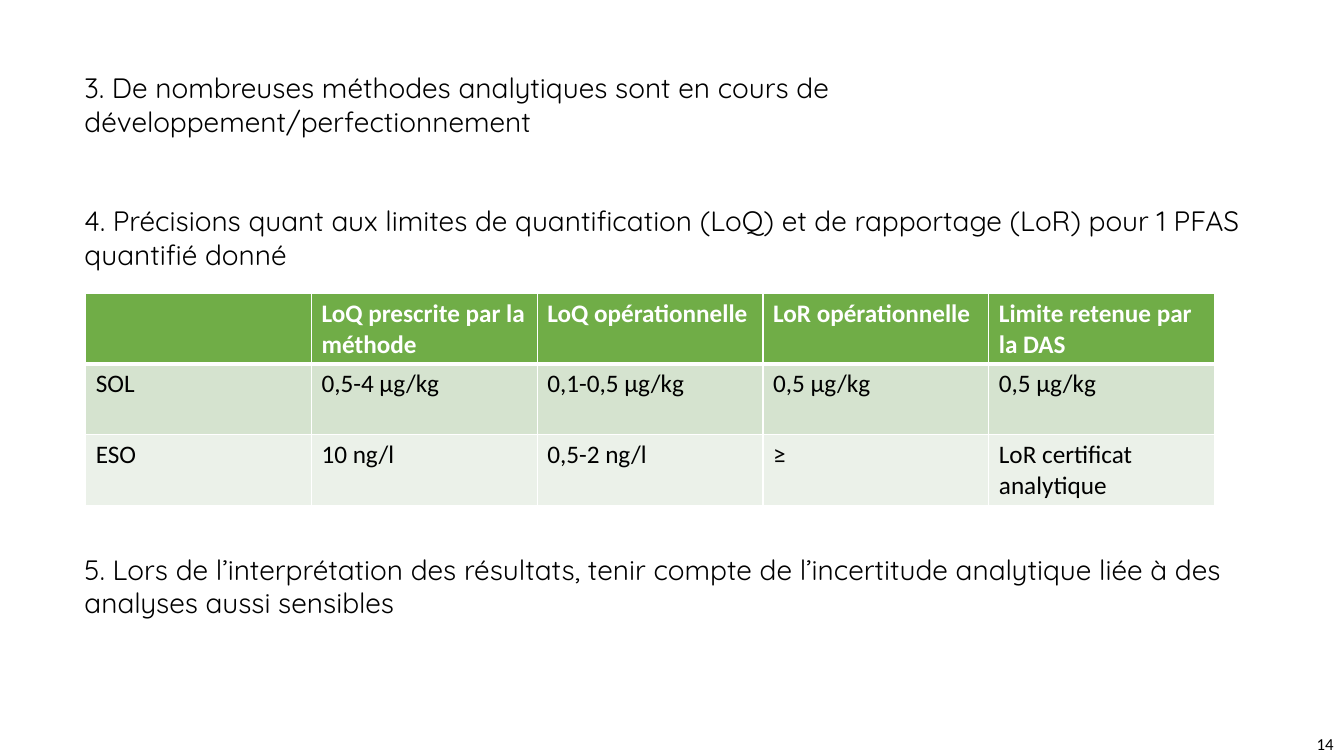
from itertools import product
from lxml.etree import SubElement
from pptx import Presentation
from pptx.dml.color import RGBColor
from pptx.enum.text import MSO_ANCHOR, PP_ALIGN
from pptx.oxml.ns import qn
from pptx.util import Cm, Pt

# Content
POINTS = [  # text, space before in points
    ("3. De nombreuses méthodes analytiques sont en cours de développement/perfectionnement", 0),
    ("4. Précisions quant aux limites de quantification (LoQ) et de rapportage (LoR) "
     "pour 1 PFAS quantifié donné", 47),
    ("5. Lors de l’interprétation des résultats, tenir compte de l’incertitude analytique "
     "liée à des analyses aussi sensibles", 201),
]
LIMITS = [
    ["", "LoQ prescrite par la méthode", "LoQ opérationnelle", "LoR opérationnelle",
     "Limite retenue par la DAS"],
    ["SOL", "0,5-4 µg/kg", "0,1-0,5 µg/kg", "0,5 µg/kg", "0,5 µg/kg"],
    ["ESO", "10 ng/l", "0,5-2 ng/l", "≥", "LoR certificat analytique"],
]
NUMBER = "14"

# Look
HEX = {"text": "000000", "white": "FFFFFF", "head": "70AD47", "sol": "D5E3CF", "eso": "EBF1E9"}
FILLS = ["head", "sol", "eso"]
POINT = {"name": "Quicksand", "size": Pt(20)}
HEAD = {"name": "Calibri", "size": Pt(18), "bold": True}
BODY = {"name": "Calibri", "size": Pt(18), "bold": False}
PAGE = {"name": "Calibri", "size": Pt(12)}

# Layout
COL, ROW = Cm(5.69), Cm(1.78)


def style(para, form, color="text"):
    for key, value in form.items():
        setattr(para.font, key, value)
    para.font.color.rgb = RGBColor.from_string(HEX[color])


def add_box(slide, left, top, width, height):
    frame = slide.shapes.add_textbox(Cm(left), Cm(top), Cm(width), Cm(height)).text_frame
    frame.word_wrap = True
    return frame


def add_edge(cell, side, width):
    line = SubElement(cell._tc.get_or_add_tcPr(), qn(f"a:ln{side}"), w=str(Pt(width)))
    fill = SubElement(line, qn("a:solidFill"))
    SubElement(fill, qn("a:srgbClr"), val=HEX["white"])


deck = Presentation()
deck.slide_width, deck.slide_height = Cm(33.87), Cm(19.05)
slide = deck.slides.add_slide(deck.slide_layouts[6])

# Page number
page = add_box(slide, 26.24, 18.36, 7.62, 0.76)
page.vertical_anchor = MSO_ANCHOR.MIDDLE
para = page.paragraphs[0]
para.text, para.alignment = NUMBER, PP_ALIGN.RIGHT
style(para, PAGE)

# Numbered points, with room for the table
body = add_box(slide, 1.88, 1.65, 29.85, 14.63)
for index, (text, gap) in enumerate(POINTS):
    para = body.add_paragraph() if index else body.paragraphs[0]
    para.text = text
    if gap:
        para.space_before = Pt(gap)
    style(para, POINT)

# Table of limits
rows, cols = len(LIMITS), len(LIMITS[0])
table = slide.shapes.add_table(rows, cols, Cm(2.16), Cm(7.39), COL * cols, ROW * rows).table
for col in table.columns:
    col.width = COL
for row in table.rows:
    row.height = ROW
for r, c in product(range(rows), range(cols)):
    cell = table.cell(r, c)
    cell.text = LIMITS[r][c]
    style(cell.text_frame.paragraphs[0], BODY if r else HEAD, "text" if r else "white")
    for side in "LRTB":
        thick = (r, side) in [(0, "B"), (1, "T")]
        add_edge(cell, side, 3 if thick else 1)
    cell.fill.solid()
    cell.fill.fore_color.rgb = RGBColor.from_string(HEX[FILLS[r]])

deck.save("out.pptx")
